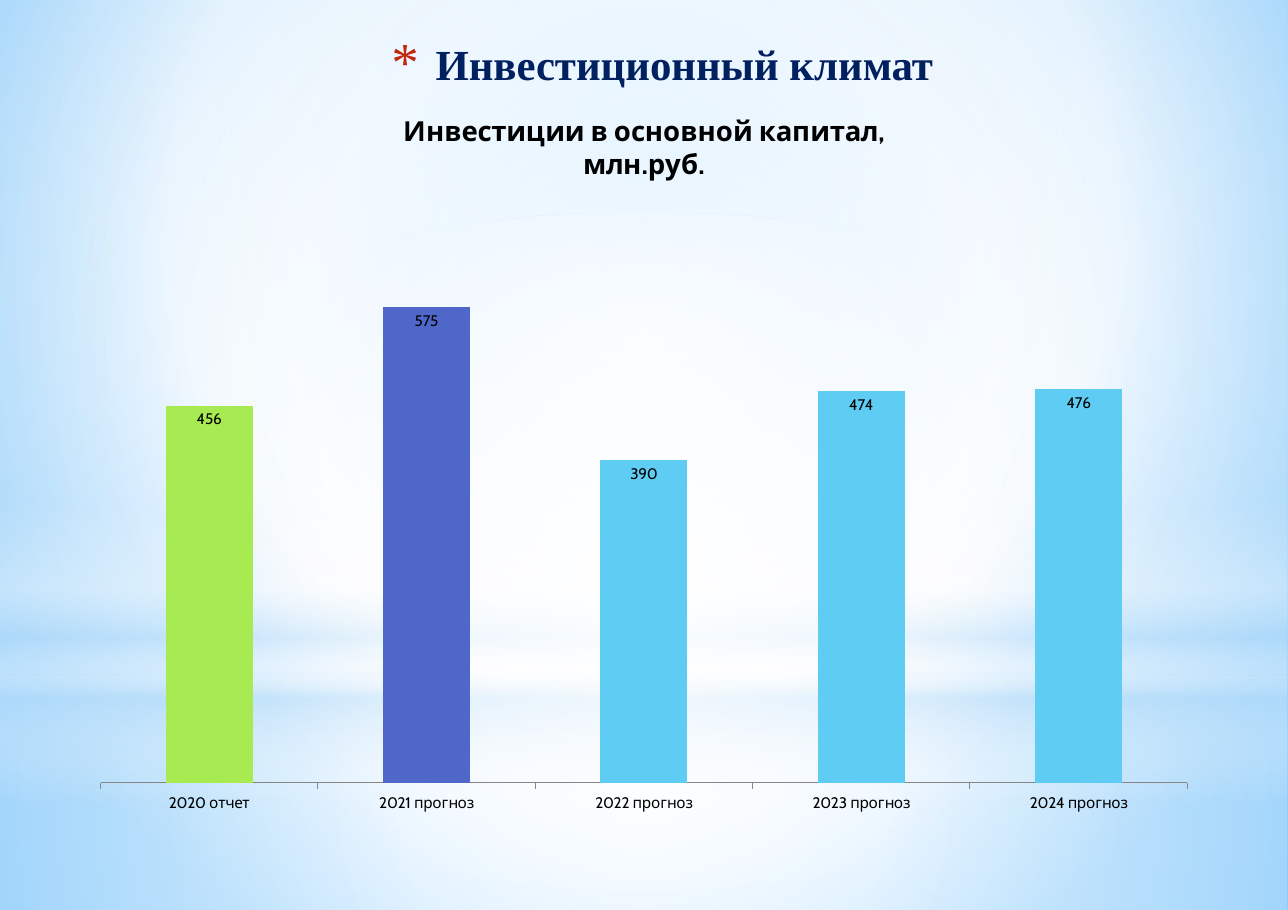
from lxml import etree
from pptx import Presentation
from pptx.chart.data import CategoryChartData
from pptx.dml.color import RGBColor
from pptx.enum.chart import XL_CHART_TYPE, XL_LABEL_POSITION, XL_TICK_MARK
from pptx.enum.shapes import MSO_SHAPE
from pptx.enum.text import MSO_ANCHOR, PP_ALIGN
from pptx.oxml import parse_xml
from pptx.oxml.ns import nsdecls, qn
from pptx.util import Inches, Pt

STACKED = XL_CHART_TYPE.COLUMN_STACKED
INSIDE_END = XL_LABEL_POSITION.INSIDE_END
TICK_OUTSIDE = XL_TICK_MARK.OUTSIDE
TOP = MSO_ANCHOR.TOP
CENTER = PP_ALIGN.CENTER
RECTANGLE = MSO_SHAPE.RECTANGLE
OVAL = MSO_SHAPE.OVAL
WIDTH, HEIGHT = 11.69, 8.26


def color(value):
    return RGBColor.from_string(value)


def set_gradient(properties, stops, focus):
    gradient = etree.Element(qn("a:gradFill"), rotWithShape="1")
    stop_list = etree.SubElement(gradient, qn("a:gsLst"))
    for position, value, opacity in stops:
        stop = etree.SubElement(stop_list, qn("a:gs"), pos=str(position * 1000))
        stop_color = etree.SubElement(stop, qn("a:srgbClr"), val=value)
        etree.SubElement(stop_color, qn("a:alpha"), val=str(opacity * 1000))
    if focus:
        path = etree.SubElement(gradient, qn("a:path"), attrib={"path": "circle"})
        sides = {side: str(share * 1000) for side, share in zip("ltrb", focus)}
        etree.SubElement(path, qn("a:fillToRect"), attrib=sides)
    else:
        etree.SubElement(gradient, qn("a:lin"), ang="5400000", scaled="0")
    properties.replace(properties.find(qn("a:solidFill")), gradient)


presentation = Presentation()
presentation.slide_width = Inches(WIDTH)
presentation.slide_height = Inches(HEIGHT)
slide = presentation.slides.add_slide(presentation.slide_layouts[5])

slide.background.fill.solid()
set_gradient(
    slide.element.find(".//" + qn("p:bgPr")),
    [(0, "9ED5FF", 100), (60, "FFFFFF", 100), (100, "5BB9FF", 100)],
    (20, 10, 20, 60),
)

MIDDLE = (50, 50, 50, 50)
glow_layers = [
    (RECTANGLE, 6.15, 2.11, MIDDLE,
     [(0, "FFFFFF", 91), (37, "FFFFFF", 76), (100, "B4DCFA", 79)]),
    (RECTANGLE, 0, 6.15, MIDDLE,
     [(0, "FFFFFF", 89), (48, "FFFFFF", 62), (100, "B4DCFA", 79)]),
    (RECTANGLE, 4.54, 2.75, None,
     [(0, "FFFFFF", 0), (29, "FFFFFF", 30), (45, "B4DCFA", 40),
      (55, "FFFFFF", 26), (65, "B4DCFA", 60), (100, "FFFFFF", 0)]),
    (OVAL, 1.93, 6.15, MIDDLE,
     [(0, "FFFFFF", 100), (56, "FFFFFF", 0)]),
]
for kind, top, height, focus, stops in glow_layers:
    shape = slide.shapes.add_shape(kind, 0, Inches(top), Inches(WIDTH), Inches(height))
    shape.shadow.inherit = False
    shape.line.fill.background()
    shape.fill.solid()
    set_gradient(shape.element.spPr, stops, focus)

title = slide.shapes.title
title_box = {"left": 0.67, "top": 0.25, "width": 10.68, "height": 0.72}
for name, value in title_box.items():
    setattr(title, name, Inches(value))
title.element.getparent().append(title.element)
title.text_frame.text = "Инвестиционный климат"
title.text_frame.vertical_anchor = TOP
title.text_frame.margin_top = Inches(0.09)
paragraph = title.text_frame.paragraphs[0]
paragraph.alignment = CENTER
title_font = paragraph.runs[0].font
for name, value in {"name": "Times New Roman", "size": Pt(28), "bold": True}.items():
    setattr(title_font, name, value)
title_font.color.rgb = color("002060")

bullet = paragraph._p.get_or_add_pPr()
bullet.set("marL", str(Inches(0.4)))
bullet.set("indent", str(Inches(-0.4)))
bullet_color = etree.SubElement(bullet, qn("a:buClr"))
etree.SubElement(bullet_color, qn("a:srgbClr"), val="C3260C")
etree.SubElement(bullet, qn("a:buSzPct"), val="128000")
etree.SubElement(bullet, qn("a:buFont"), typeface="Times New Roman")
etree.SubElement(bullet, qn("a:buChar"), char="*")

chart_data = CategoryChartData(number_format="0")
chart_data.categories = ["2020 отчет"] + [f"{year} прогноз" for year in range(2021, 2025)]
chart_data.add_series("Инвестиции", [456, 575, 390, 474, 476])
chart = slide.shapes.add_chart(
    STACKED, Inches(0.76), Inches(0.81), Inches(10.17), Inches(6.64), chart_data
).chart
chart.has_legend = False
for name, value in {"name": "Cabin", "size": Pt(10)}.items():
    setattr(chart.font, name, value)
chart.font.color.rgb = color("000000")

chart.has_title = True
chart_title = chart.chart_title.text_frame
chart_title.text = "Инвестиции в основной капитал,\nмлн.руб."
for paragraph in chart_title.paragraphs:
    for name, value in {"name": "Cabin", "size": Pt(18), "bold": True}.items():
        setattr(paragraph.runs[0].font, name, value)
    paragraph.runs[0].font.color.rgb = color("000000")
chart.chart_title.include_in_layout = False

category_axis = chart.category_axis
category_axis.major_tick_mark = TICK_OUTSIDE
category_axis.format.line.color.rgb = color("868686")
category_axis.format.line.width = Pt(0.75)
value_axis = chart.value_axis
axis_format = {
    "visible": False, "has_major_gridlines": False,
    "minimum_scale": 0, "maximum_scale": 700,
}
for name, value in axis_format.items():
    setattr(value_axis, name, value)

plot = chart.plots[0]
plot_format = {
    "gap_width": 150, "overlap": 100,
    "vary_by_categories": False, "has_data_labels": True,
}
for name, value in plot_format.items():
    setattr(plot, name, value)
label_format = {
    "show_value": True, "position": INSIDE_END,
    "number_format": "0", "number_format_is_linked": False,
}
for name, value in label_format.items():
    setattr(plot.data_labels, name, value)

series = plot.series[0]
bars = [series] + [series.points[index] for index in range(2)]
for bar, value in zip(bars, ["5ECCF3", "A7EA52", "4E67C8"]):
    bar.format.fill.solid()
    bar.format.fill.fore_color.rgb = color(value)

plot_area = chart.element.find(".//" + qn("c:plotArea"))
for layout in plot_area.findall(qn("c:layout")):
    plot_area.remove(layout)
plot_area.insert(0, parse_xml(
    f'<c:layout {nsdecls("c")}><c:manualLayout><c:layoutTarget val="inner"/>'
    '<c:xMode val="edge"/><c:yMode val="edge"/><c:x val="0.015"/><c:y val="0.157"/>'
    '<c:w val="0.97"/><c:h val="0.791"/></c:manualLayout></c:layout>'
))

presentation.save("out.pptx")
